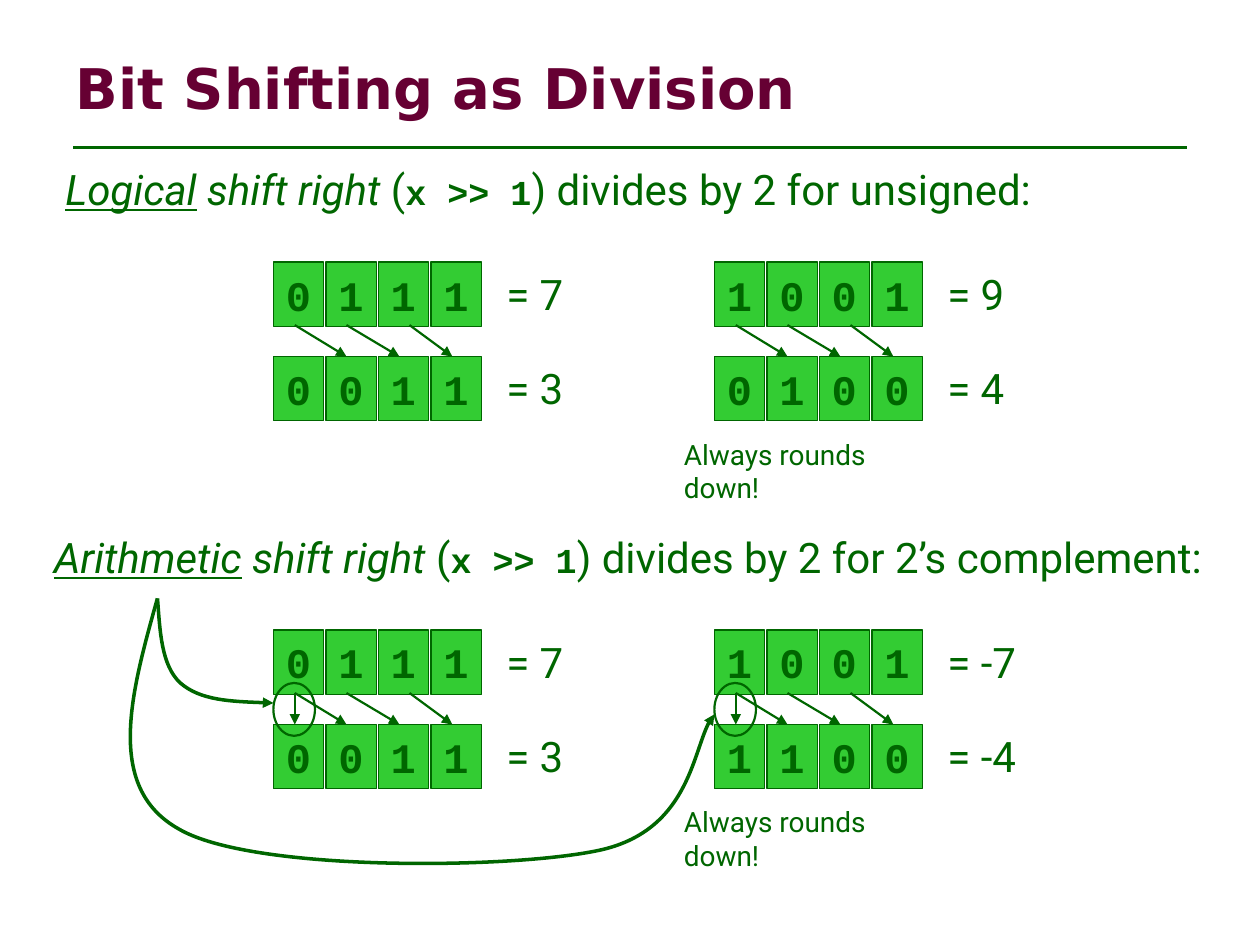
"""Build a slide that explains bit shifting as division."""
import pptx
import pptx.dml.color
import pptx.enum.shapes
import pptx.enum.text
import pptx.oxml
import pptx.oxml.ns
import pptx.util

Inches = pptx.util.Inches
Shapes = pptx.enum.shapes.MSO_SHAPE

THEME = {
    "title": "660033", "ink": "006600", "cell": "33CC33",
    "title_font": "DejaVu Sans", "body_font": "Roboto", "code_font": "Courier New",
    "title_size": 32, "body_size": 24, "code_size": 20, "note_size": 16,
    "cell_line": 0.75, "arrow_line": 1.25, "rule_line": 1.5, "curve_line": 2,
}

TITLE = "Bit Shifting as Division"
CODE = "x >> 1"
NOTE = "Always rounds down!"
SECTIONS = [
    {"name": "Logical", "ending": ") divides by 2 for unsigned:",
     "top": 1.25, "left": 0.42, "width": 8.01, "keeps_sign": False,
     "examples": [[("0111", "= 7"), ("0011", "= 3")],
                  [("1001", "= 9"), ("0100", "= 4")]]},
    {"name": "Arithmetic", "ending": ") divides by 2 for 2’s complement:",
     "top": 4.17, "left": 0.33, "width": 9.47, "keeps_sign": True,
     "examples": [[("0111", "= 7"), ("0011", "= 3")],
                  [("1001", "= -7"), ("1100", "= -4")]]},
]
EXAMPLE_LEFTS = [2.17, 5.67]
EXAMPLE_OFFSET, NOTE_OFFSET, NOTE_LEFT = 0.83, 2.17, 5.33
CELL_WIDTH, CELL_HEIGHT, CELL_PITCH, ROW_PITCH = 0.4, 0.51, 1.25 / 3, 0.75
VALUE_OFFSET = 1.75
SHIFT_ARROWS = [(0.17, 0.58), (0.58, 1), (1.08, 1.42)]
SIGN_ARROW = (0.17, 0.17)
SIGN_CURVES = [
    [(1.25, 4.75), (1.27, 5.01), (1.28, 5.28), (1.43, 5.42),
     (1.59, 5.56), (1.88, 5.57), (2.17, 5.58)],
    [(1.25, 4.75), (1.04, 5.5), (0.83, 6.25), (1.42, 6.58),
     (2, 6.92), (4.04, 6.9), (4.75, 6.75),
     (5.46, 6.6), (5.51, 5.85), (5.67, 5.67)],
]


def color(name):
    return pptx.dml.color.RGBColor.from_string(THEME[name])


def style_run(run, font="body_font", size="body_size", ink="ink", bold=False):
    run.font.name = THEME[font]
    run.font.size = pptx.util.Pt(THEME[size])
    run.font.color.rgb = color(ink)
    run.font.bold = bold


def style_line(shape, width):
    shape.line.color.rgb = color("ink")
    shape.line.width = pptx.util.Pt(THEME[width])


def add_arrowhead(shape):
    line = shape.line._get_or_add_ln()
    pptx.oxml.ns.qn("a:tailEnd")
    head = pptx.oxml.parse_xml(
        f'<a:tailEnd {pptx.oxml.ns.nsdecls("a")} type="triangle"/>')
    line.append(head)


def add_line(shapes, start, end, width, arrow=True):
    connector = shapes.add_connector(
        pptx.enum.shapes.MSO_CONNECTOR.STRAIGHT, *map(Inches, start + end))
    style_line(connector, width)
    connector._element.spPr.append(pptx.oxml.parse_xml(
        f'<a:effectLst {pptx.oxml.ns.nsdecls("a")}/>'))
    if arrow:
        add_arrowhead(connector)


def add_text(shapes, position, texts, size="body_size"):
    box = shapes.add_textbox(*map(Inches, position))
    box.text_frame.word_wrap = False
    box.text_frame.auto_size = pptx.enum.text.MSO_AUTO_SIZE.SHAPE_TO_FIT_TEXT
    paragraph = box.text_frame.paragraphs[0]
    for text in texts:
        run = paragraph.add_run()
        run.text = text
        style_run(run, size=size)
    return paragraph.runs


def add_heading(shapes, section):
    position = (section["left"], section["top"], section["width"], 0.5)
    name, action, _, code, _ = add_text(
        shapes, position,
        [section["name"], " shift right", " (", CODE, section["ending"]])
    name.font.italic = action.font.italic = True
    name.font.underline = True
    style_run(code, "code_font", "code_size", bold=True)


def add_cell(shapes, left, top, bit):
    cell = shapes.add_shape(
        Shapes.RECTANGLE, *map(Inches, (left, top, CELL_WIDTH, CELL_HEIGHT)))
    cell.shadow.inherit = False
    cell.fill.solid()
    cell.fill.fore_color.rgb = color("cell")
    style_line(cell, "cell_line")
    cell.text_frame.text = bit
    cell.text_frame.word_wrap = False
    cell.text_frame.vertical_anchor = pptx.enum.text.MSO_ANCHOR.MIDDLE
    style_run(cell.text_frame.paragraphs[0].runs[0], "code_font", bold=True)


def add_example(shapes, left, top, rows, keeps_sign):
    for row, (bits, value) in enumerate(rows):
        row_top = top + row * ROW_PITCH
        for column, bit in enumerate(bits):
            add_cell(shapes, left + column * CELL_PITCH, row_top, bit)
        width = 0.85 if "-" in value else 0.73
        add_text(shapes, (left + VALUE_OFFSET, row_top, width, 0.5), [value])
    for start, end in SHIFT_ARROWS + [SIGN_ARROW] * keeps_sign:
        add_line(shapes, (left + start, top + 0.5),
                 (left + end, top + ROW_PITCH), "arrow_line")
    if keeps_sign:
        ring = shapes.add_shape(
            Shapes.OVAL, *map(Inches, (left, top + 0.42, 0.33, 0.42)))
        ring.shadow.inherit = False
        ring.fill.background()
        style_line(ring, "arrow_line")


def add_curve(shapes, points):
    start, *others = [(Inches(x), Inches(y)) for x, y in points]
    builder = shapes.build_freeform(*start)
    builder.add_line_segments(others, close=False)
    curve = builder.convert_to_shape()
    curve.shadow.inherit = False
    curve.fill.background()
    style_line(curve, "curve_line")
    add_arrowhead(curve)
    segments = curve._element.findall(".//" + pptx.oxml.ns.qn("a:lnTo"))
    for first in range(0, len(segments), 3):
        bezier = pptx.oxml.parse_xml(
            f'<a:cubicBezTo {pptx.oxml.ns.nsdecls("a")}/>')
        segments[first].addprevious(bezier)
        for segment in segments[first:first + 3]:
            bezier.append(segment[0])
            segment.getparent().remove(segment)


def add_title(slide):
    title = slide.shapes.title
    title.left, title.top, title.width, title.height = map(
        Inches, (0.5, 0.3, 9, 0.78))
    title.text_frame.text = TITLE
    title.text_frame.vertical_anchor = pptx.enum.text.MSO_ANCHOR.MIDDLE
    paragraph = title.text_frame.paragraphs[0]
    paragraph.alignment = pptx.enum.text.PP_ALIGN.LEFT
    style_run(paragraph.runs[0], "title_font", "title_size", "title", bold=True)


def main():
    presentation = pptx.Presentation()
    presentation.slide_width, presentation.slide_height = Inches(10), Inches(7.5)
    slide = presentation.slides.add_slide(presentation.slide_layouts[5])
    add_title(slide)
    add_line(slide.shapes, (0.58, 1.17), (9.42, 1.17), "rule_line", arrow=False)
    for section in SECTIONS:
        shapes = slide.shapes.add_group_shape().shapes
        add_heading(shapes, section)
        top = section["top"]
        for left, rows in zip(EXAMPLE_LEFTS, section["examples"]):
            add_example(shapes, left, top + EXAMPLE_OFFSET, rows,
                        section["keeps_sign"])
        if section["keeps_sign"]:
            for points in SIGN_CURVES:
                add_curve(shapes, points)
        add_text(shapes, (NOTE_LEFT, top + NOTE_OFFSET, 2.29, 0.37), [NOTE],
                 "note_size")
    presentation.save("out.pptx")


if __name__ == "__main__":
    main()
